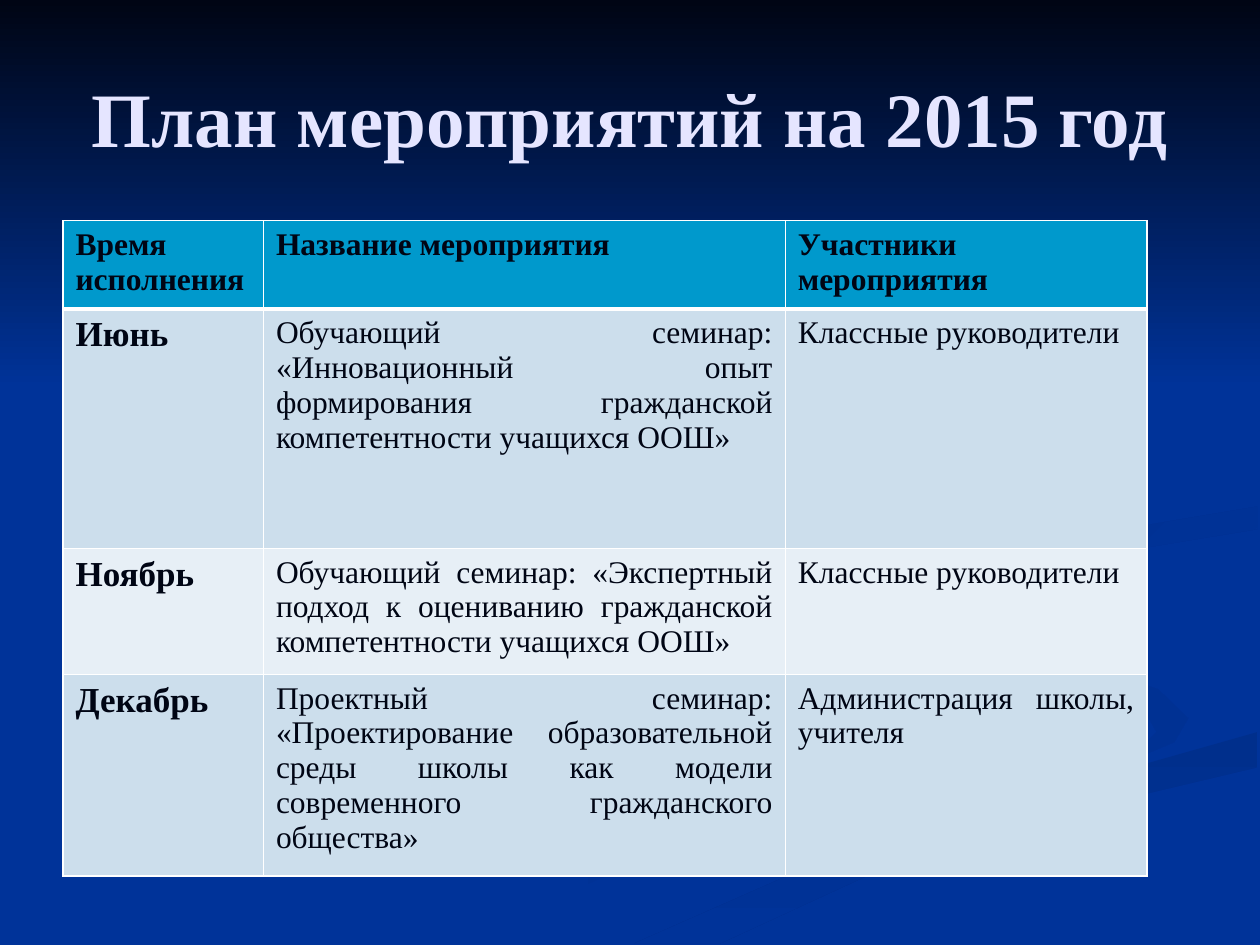
from lxml import etree
from pptx import Presentation
from pptx.dml.color import RGBColor
from pptx.enum.text import MSO_ANCHOR, PP_ALIGN
from pptx.oxml.ns import qn
from pptx.util import Cm, Pt

LEFT, CENTER, JUSTIFY = PP_ALIGN.LEFT, PP_ALIGN.CENTER, PP_ALIGN.JUSTIFY
MIDDLE = MSO_ANCHOR.MIDDLE

BLUE = RGBColor(0x00, 0x33, 0x99)
BLUE_SHADE = RGBColor(0x00, 0x31, 0x93)
BLUE_DARK = RGBColor(0x00, 0x2F, 0x8C)
BLUE_MID = RGBColor(0x00, 0x30, 0x91)
NIGHT = RGBColor(0x00, 0x05, 0x14)
LAVENDER = RGBColor(0xE5, 0xE5, 0xFF)
HEADER = RGBColor(0x00, 0x99, 0xCC)
BAND_DARK = RGBColor(0xCC, 0xDE, 0xEC)
BAND_LIGHT = RGBColor(0xE7, 0xEF, 0xF6)
WHITE = RGBColor(0xFF, 0xFF, 0xFF)


def write(frame, text, size=18, color=NIGHT, bold=False, align=LEFT):
    paragraph = frame.paragraphs[0]
    paragraph.alignment = align
    run = paragraph.add_run()
    run.text = text
    run.font.name = "Times New Roman"
    run.font.size = Pt(size)
    run.font.bold = bold
    run.font.color.rgb = color


def add_border(cell, side, width):
    """Append one white border; call in the order L, R, T, B, before the fill."""
    line = etree.SubElement(cell._tc.get_or_add_tcPr(), qn(f"a:ln{side}"), w=str(Pt(width)))
    solid = etree.SubElement(line, qn("a:solidFill"))
    etree.SubElement(solid, qn("a:srgbClr"), val=str(WHITE))


prs = Presentation()
prs.slide_width, prs.slide_height = Cm(25.4), Cm(19.05)
slide = prs.slides.add_slide(prs.slide_layouts[5])
slide.background.fill.solid()
slide.background.fill.fore_color.rgb = BLUE

# Backdrop: start colour, end colour, clockwise angle, outline in 0.01 inch
GRID = Cm(0.0254)
backdrop = [
    (BLUE, BLUE_SHADE, 0, [
        (781, 553), (575, 459), (783, 559), (759, 590), (458, 674), (300, 749),
        (361, 749), (499, 687), (786, 601), (800, 581)]),
    (BLUE, BLUE_SHADE, 45, [
        (943, 570), (919, 547), (745, 490), (724, 464), (755, 505), (907, 562),
        (918, 581), (894, 605), (932, 589)]),
    (BLUE_DARK, BLUE, 90, [
        (503, 749), (571, 749), (695, 692), (821, 651), (998, 609), (998, 581),
        (797, 638), (630, 693)]),
    (BLUE_MID, BLUE, 45, [
        (781, 460), (826, 496), (805, 476), (859, 443), (998, 420), (998, 402),
        (849, 427)]),
    (BLUE_DARK, BLUE, 45, [
        (683, 430), (855, 391), (894, 344), (843, 275), (762, 233), (870, 299),
        (882, 354), (625, 426), (577, 462), (622, 500), (593, 470)]),
    (NIGHT, BLUE, 90, [(0, 0), (0, 308), (1000, 308), (1000, 0)]),
]
for start, end, angle, outline in backdrop:
    builder = slide.shapes.build_freeform(*outline[0], scale=GRID)
    builder.add_line_segments(outline[1:], close=True)
    swirl = builder.convert_to_shape()
    swirl.shadow.inherit = False
    swirl.line.fill.background()
    swirl.fill.gradient()
    swirl.fill.gradient_angle = (360 - angle) % 360
    for stop, color in zip(swirl.fill.gradient_stops, (start, end)):
        stop.color.rgb = color

# The title goes in front of the backdrop
title = slide.shapes.title
slide.shapes._spTree.append(title._element)
title.left, title.top, title.width, title.height = Cm(1.27), Cm(0.76), Cm(22.86), Cm(3.18)
title.text_frame.vertical_anchor = MIDDLE
write(title.text_frame, "План мероприятий на 2015 год", size=44, color=LAVENDER,
      bold=True, align=CENTER)

plan = [
    ("Время исполнения", "Название мероприятия", "Участники мероприятия"),
    ("Июнь",
     "Обучающий семинар: «Инновационный опыт формирования гражданской "
     "компетентности учащихся ООШ»",
     "Классные руководители"),
    ("Ноябрь",
     "Обучающий семинар: «Экспертный подход к оцениванию гражданской "
     "компетентности учащихся ООШ»",
     "Классные руководители"),
    ("Декабрь",
     "Проектный семинар: «Проектирование образовательной среды школы как модели "
     "современного гражданского общества»",
     "Администрация школы, учителя"),
]
column_widths = [4.04, 10.52, 7.29]
row_heights = [1.78, 4.83, 2.54, 4.06]
row_fills = [HEADER, BAND_DARK, BAND_LIGHT, BAND_DARK]

schedule = slide.shapes.add_table(len(plan), len(column_widths), Cm(1.27), Cm(4.45),
                                  Cm(sum(column_widths)), Cm(sum(row_heights))).table
for column, width in zip(schedule.columns, column_widths):
    column.width = Cm(width)
for r, (entries, height) in enumerate(zip(plan, row_heights)):
    schedule.rows[r].height = Cm(height)
    for c, entry in enumerate(entries):
        cell = schedule.cell(r, c)
        is_header, is_month = r == 0, r > 0 and c == 0
        for side in "LRTB":
            under_header = (r, side) in ((0, "B"), (1, "T"))
            add_border(cell, side, 3 if under_header else 1)
        cell.fill.solid()
        cell.fill.fore_color.rgb = row_fills[r]
        write(cell.text_frame, entry, size=20 if is_month else 18,
              bold=is_header or is_month,
              align=LEFT if is_header or is_month else JUSTIFY)

prs.save("out.pptx")
